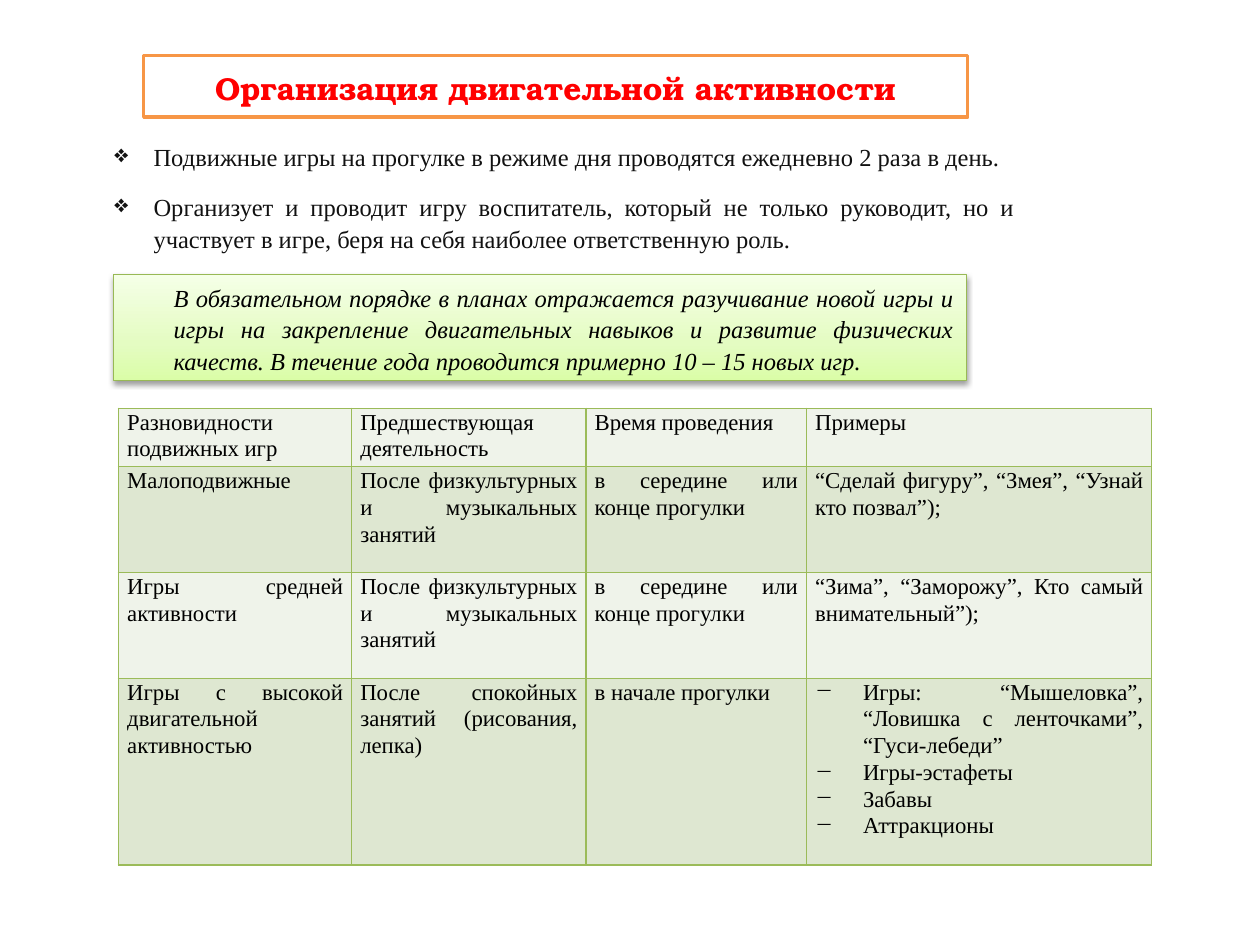
from copy import deepcopy

from pptx import Presentation
from pptx.dml.color import RGBColor
from pptx.enum.shapes import MSO_SHAPE
from pptx.enum.text import MSO_ANCHOR, PP_ALIGN
from pptx.oxml import parse_xml
from pptx.oxml.ns import nsdecls, qn
from pptx.util import Emu, Inches, Pt

TITLE = "Организация двигательной активности"
RULES = [
    "Подвижные игры на прогулке в режиме дня проводятся ежедневно 2 раза в день.",
    "Организует и проводит игру воспитатель, который не только руководит, "
    "но и участвует в игре, беря на себя наиболее ответственную роль.",
]
CALLOUT = (
    "В обязательном порядке в планах отражается разучивание новой игры и игры "
    "на закрепление двигательных навыков и развитие физических качеств. "
    "В течение года проводится примерно 10 – 15 новых игр."
)
AFTER_LESSONS = "После физкультурных и музыкальных занятий"
MID_WALK = "в середине или конце прогулки"
ACTIVE_GAMES = [
    "Игры: “Мышеловка”, “Ловишка с ленточками”, “Гуси-лебеди”",
    "Игры-эстафеты",
    "Забавы",
    "Аттракционы",
]
GAMES = [
    ["Разновидности подвижных игр", "Предшествующая деятельность",
     "Время проведения", "Примеры"],
    ["Малоподвижные", AFTER_LESSONS, MID_WALK,
     "“Сделай фигуру”, “Змея”, “Узнай кто позвал”);"],
    ["Игры средней активности", AFTER_LESSONS, MID_WALK,
     "“Зима”, “Заморожу”, Кто самый внимательный”);"],
    ["Игры с высокой двигательной активностью",
     "После спокойных занятий (рисования, лепка)",
     "в начале прогулки", ACTIVE_GAMES],
]
COLUMN_WIDTHS = [1.85, 1.86, 1.75, 2.74]
ROW_HEIGHTS = [0.46, 0.84, 0.84, 1.48]

SERIF = "Times New Roman"
WHITE = RGBColor(0xFF, 0xFF, 0xFF)
BLACK = RGBColor(0, 0, 0)
INK = RGBColor(0x11, 0x11, 0x11)
RED = RGBColor(0xFF, 0, 0)
ORANGE = RGBColor(0xF7, 0x96, 0x46)
GREEN = RGBColor(0x98, 0xB9, 0x55)
BANDS = [RGBColor(0xEF, 0xF3, 0xEA), RGBColor(0xDE, 0xE7, 0xD1)]
BORDER = RGBColor(0x9B, 0xBB, 0x59)
GRADIENT = [
    (0, RGBColor(0xDA, 0xFD, 0xA7)),
    (0.35, RGBColor(0xE4, 0xFC, 0xC2)),
    (1, RGBColor(0xF5, 0xFF, 0xE7)),
]


def place(shape, left, top, width, height):
    shape.left, shape.top = Inches(left), Inches(top)
    shape.width, shape.height = Inches(width), Inches(height)


def write(frame, texts, size, color, font=SERIF, align=PP_ALIGN.JUSTIFY,
          bold=False, italic=False, bullet=None, margin=0, hanging=0,
          before=0, after=8, between=8):
    """Fill a frame; between is the space after every paragraph but the last."""
    frame.word_wrap = True
    frame.text = "\n".join(texts)
    for index, paragraph in enumerate(frame.paragraphs):
        properties = paragraph._p.get_or_add_pPr()
        properties.set("marL", str(Inches(margin)))
        properties.set("indent", str(-Inches(hanging)))
        if bullet:
            properties.append(parse_xml(
                f'<a:buChar {nsdecls("a")} char="{bullet}"/>'))
        paragraph.alignment = align
        paragraph.line_spacing = 1.07
        paragraph.space_before = Pt(before if index else 0)
        paragraph.space_after = Pt(after if index == len(texts) - 1 else between)
        for span in paragraph.runs:
            span.font.name, span.font.size = font, Pt(size)
            span.font.bold, span.font.italic = bold, italic
            span.font.color.rgb = color


def fill_gradient(shape):
    shape.fill.gradient()
    shape.fill.gradient_angle = 90
    stop_list = shape._element.spPr.find(qn("a:gradFill")).find(qn("a:gsLst"))
    stop_list.insert(1, deepcopy(stop_list[0]))
    for stop, (position, color) in zip(shape.fill.gradient_stops, GRADIENT):
        stop.position = position
        stop.color.rgb = color


def add_soft_shadow(shape):
    shape.shadow.inherit = False
    shape._element.spPr.find(qn("a:effectLst")).append(parse_xml(
        f'<a:outerShdw {nsdecls("a")} blurRad="{Pt(3.1)}" dist="{Pt(1.6)}" '
        'dir="5400000" rotWithShape="0"><a:srgbClr val="000000">'
        '<a:alpha val="38000"/></a:srgbClr></a:outerShdw>'))


def draw_borders(cell):
    properties = cell._tc.get_or_add_tcPr()
    for index, side in enumerate(("lnL", "lnR", "lnT", "lnB")):
        properties.insert(index, parse_xml(
            f'<a:{side} {nsdecls("a")} w="{Pt(1)}"><a:solidFill>'
            f'<a:srgbClr val="{BORDER}"/></a:solidFill></a:{side}>'))


def add_games_table(page):
    frame = page.shapes.add_table(
        len(GAMES), len(COLUMN_WIDTHS), Inches(0.94), Inches(3.24),
        Inches(sum(COLUMN_WIDTHS)), Inches(sum(ROW_HEIGHTS)))
    table = frame.table
    table.first_row = table.horz_banding = False
    for column, width in zip(table.columns, COLUMN_WIDTHS):
        column.width = Inches(width)
    for row_index, (row, height) in enumerate(zip(table.rows, ROW_HEIGHTS)):
        row.height = Inches(height)
        for cell, content in zip(row.cells, GAMES[row_index]):
            cell.margin_left = cell.margin_right = Inches(0.07)
            cell.margin_top = cell.margin_bottom = Emu(0)
            cell.fill.solid()
            cell.fill.fore_color.rgb = BANDS[row_index % 2]
            draw_borders(cell)
            if isinstance(content, list):
                write(cell.text_frame, content, 13, BLACK, bullet="─",
                      margin=0.38, hanging=0.38, between=0)
            else:
                write(cell.text_frame, [content], 13, BLACK)


def main():
    deck = Presentation()
    deck.slide_width, deck.slide_height = Inches(10), Inches(7.5)
    page = deck.slides.add_slide(deck.slide_layouts[5])

    title = page.shapes.title
    place(title, 1.14, 0.44, 6.54, 0.49)
    title.fill.solid()
    title.fill.fore_color.rgb = WHITE
    title.line.color.rgb = ORANGE
    title.line.width = Pt(2)
    title.text_frame.vertical_anchor = MSO_ANCHOR.MIDDLE
    write(title.text_frame, [TITLE], 18, RED, font="TeX Gyre Bonum",
          align=PP_ALIGN.CENTER, bold=True, after=0)

    rules = page.shapes.add_textbox(0, 0, 0, 0)
    place(rules, 0.43, 1.06, 7.72, 1.26)
    write(rules.text_frame, RULES, 14, INK, bullet="❖",
          margin=0.69, hanging=0.31, before=2.8)

    callout = page.shapes.add_shape(MSO_SHAPE.RECTANGLE, 0, 0, 0, 0)
    place(callout, 0.9, 2.18, 6.77, 0.84)
    fill_gradient(callout)
    callout.line.color.rgb = GREEN
    callout.line.width = Pt(0.75)
    add_soft_shadow(callout)
    callout.text_frame.vertical_anchor = MSO_ANCHOR.TOP
    write(callout.text_frame, [CALLOUT], 14, BLACK, italic=True, margin=0.38)

    add_games_table(page)
    deck.save("out.pptx")


if __name__ == "__main__":
    main()
